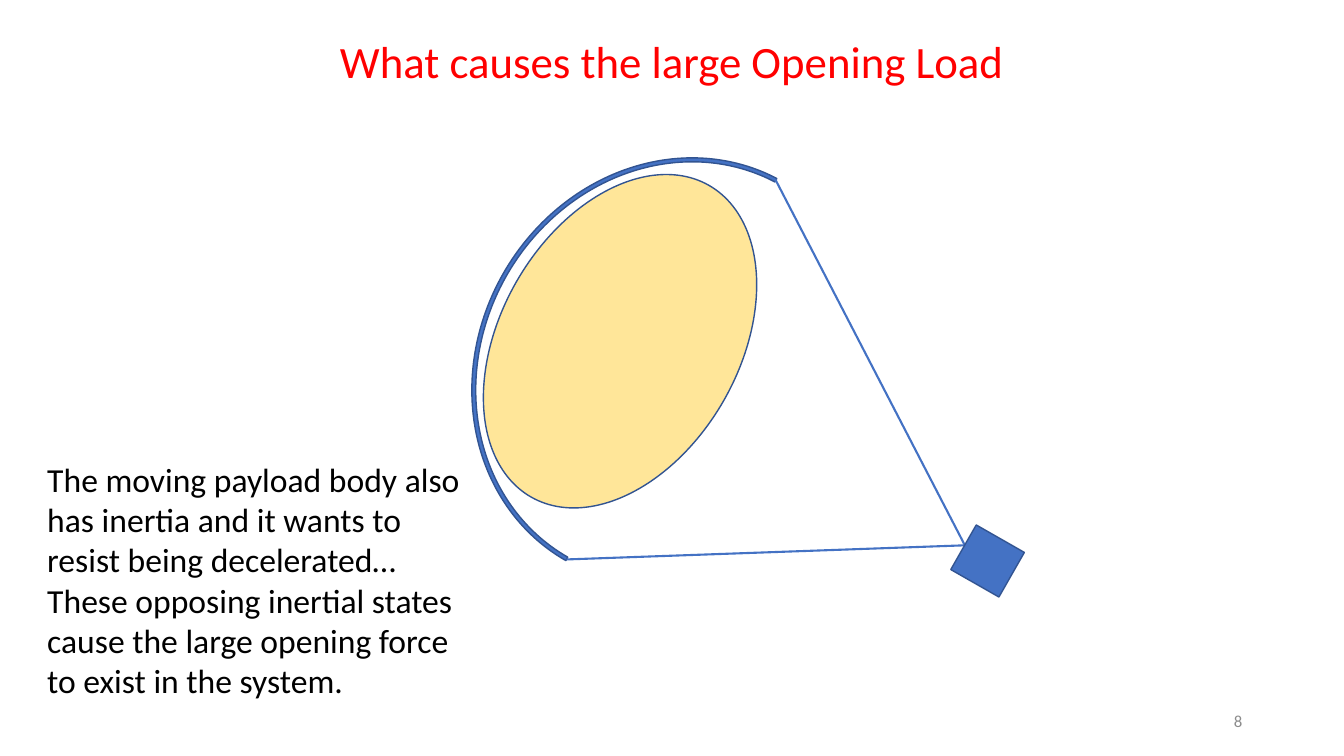
"""Build the slide on what causes the large opening load."""
from lxml import etree
from pptx import Presentation
from pptx.dml.color import RGBColor
from pptx.enum.shapes import MSO_CONNECTOR, MSO_SHAPE
from pptx.enum.text import MSO_ANCHOR, PP_ALIGN
from pptx.oxml.ns import qn
from pptx.util import Inches, Pt

ARC, RECT, OVAL = MSO_SHAPE.BLOCK_ARC, MSO_SHAPE.RECTANGLE, MSO_SHAPE.OVAL
LINE = MSO_CONNECTOR.STRAIGHT
LEFT, CENTER, RIGHT = PP_ALIGN.LEFT, PP_ALIGN.CENTER, PP_ALIGN.RIGHT
TOP, MIDDLE = MSO_ANCHOR.TOP, MSO_ANCHOR.MIDDLE

RED = RGBColor(0xFF, 0x00, 0x00)
BLACK = RGBColor(0x00, 0x00, 0x00)
GRAY = RGBColor(0x8C, 0x8C, 0x8C)
BLUE = RGBColor(0x44, 0x72, 0xC4)
NAVY = RGBColor(0x32, 0x54, 0x91)
SAND = RGBColor(0xFF, 0xE6, 0x99)

TITLE = "What causes the large Opening Load"
BODY = ("The moving payload body also has inertia and it wants to resist "
        "being decelerated… These opposing inertial states cause the large "
        "opening force to exist in the system.")
NUMBER = "8"

TILT = 299.7
CANOPY = (ARC, (4.52, 1.73, 4.33, 3.9), BLUE, (108, 215.04, 0.01))
PAYLOAD = (RECT, (9.54, 5.29, 0.51, 0.55), BLUE, ())
AIR = (OVAL, (4.37, 2.2, 3.56, 2.37), SAND, ())
KNOT = (9.57, 5.41)
RIMS = [(5.62, 5.55), (7.69, 1.78)]


def place(shape, box):
    """Move a shape to a box given in inches."""
    shape.left, shape.top, shape.width, shape.height = map(Inches, box)


def write(shape, text, size, color, align, anchor):
    """Fill a shape with one wrapped paragraph."""
    frame = shape.text_frame
    frame.word_wrap = True
    frame.vertical_anchor = anchor
    frame.text = text
    para = frame.paragraphs[0]
    para.alignment = align
    para.font.name = "Calibri"
    para.font.size = Pt(size)
    para.font.color.rgb = color


def draw(group, kind, box, fill, adjust):
    """Add one tilted, outlined shape to the group."""
    shape = group.shapes.add_shape(kind, *map(Inches, box))
    for i, value in enumerate(adjust):
        shape.adjustments[i] = value
    shape.rotation = TILT
    shape.shadow.inherit = False
    shape.fill.solid()
    shape.fill.fore_color.rgb = fill
    shape.line.color.rgb = NAVY
    shape.line.width = Pt(1)


def tie(group, start, end):
    """Add one suspension line to the group."""
    cord = group.shapes.add_connector(LINE, *map(Inches, start + end))
    cord.line.color.rgb = BLUE
    cord.line.width = Pt(1.5)
    etree.SubElement(cord._element.spPr, qn("a:effectLst"))


def main():
    """Lay out the slide and save it."""
    deck = Presentation()
    deck.slide_width, deck.slide_height = Inches(13.33), Inches(7.5)
    slide = deck.slides.add_slide(deck.slide_layouts[5])
    title = slide.shapes.title
    place(title, (3.16, 0.28, 7.01, 0.64))
    write(title, TITLE, 32, RED, CENTER, TOP)

    chute = slide.shapes.add_group_shape()
    draw(chute, *CANOPY)
    for rim in RIMS:
        tie(chute, rim, KNOT)
    draw(chute, *PAYLOAD)
    draw(chute, *AIR)

    for box, *style in [
        ((0.37, 4.5, 4.32, 2.52), BODY, 24, BLACK, LEFT, TOP),
        ((9.42, 6.95, 3, 0.4), NUMBER, 12, GRAY, RIGHT, MIDDLE),
    ]:
        write(slide.shapes.add_textbox(*map(Inches, box)), *style)
    deck.save("out.pptx")


if __name__ == "__main__":
    main()
